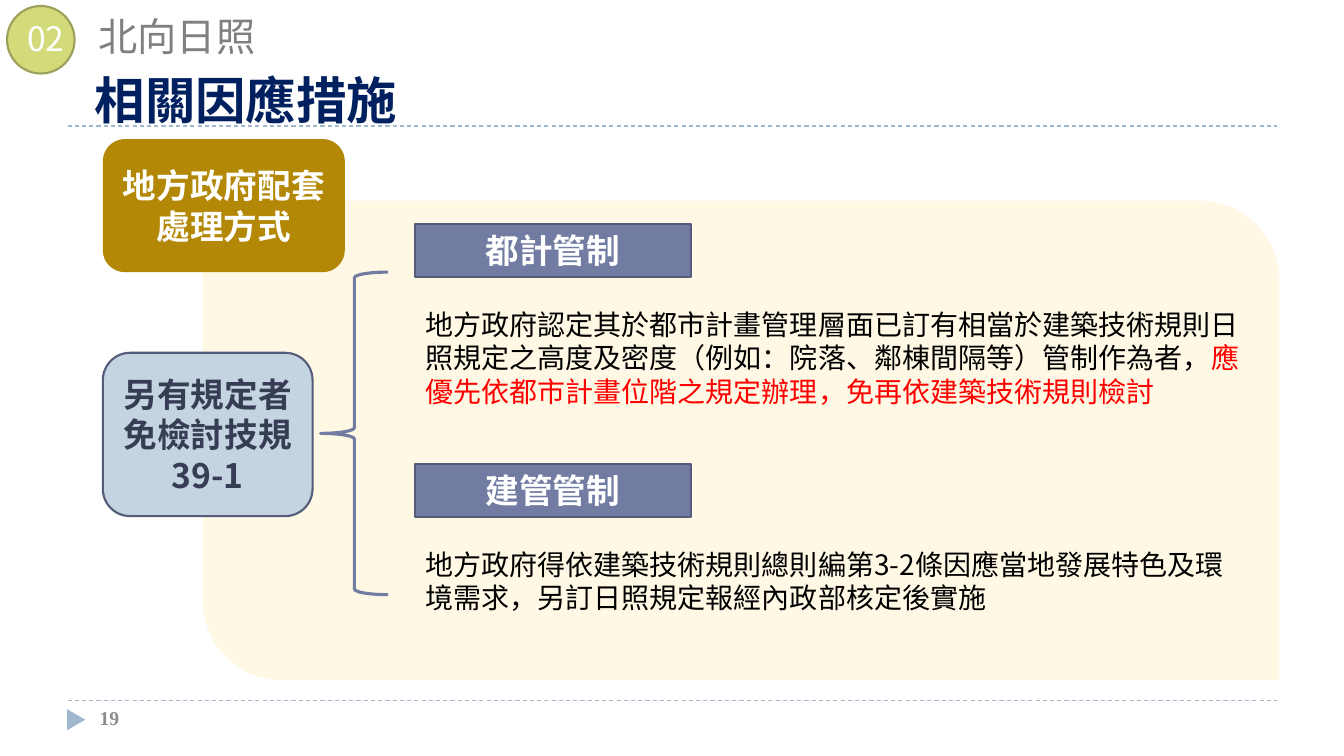
import pptx
import pptx.util
import pptx.dml.color
import pptx.enum.dml
import pptx.enum.shapes
import pptx.enum.text
import pptx.oxml.ns
import lxml.etree

RGB = pptx.dml.color.RGBColor
KIND = pptx.enum.shapes.MSO_SHAPE
ALIGN = pptx.enum.text.PP_ALIGN
ANCHOR = pptx.enum.text.MSO_ANCHOR

WHITE = RGB(0xFF, 0xFF, 0xFF)
BLACK = RGB(0x00, 0x00, 0x00)
RED = RGB(0xFF, 0x00, 0x00)
GRAY = RGB(0x80, 0x80, 0x80)
SILVER = RGB(0x8C, 0x8C, 0x8C)
NAVY = RGB(0x00, 0x20, 0x60)
SKY = RGB(0x9F, 0xB8, 0xCD)
LIME = RGB(0xD2, 0xDA, 0x7A)
OLIVE = RGB(0x9B, 0xA1, 0x5A)
CREAM = RGB(0xFE, 0xF8, 0xE4)
GOLD = RGB(0xB3, 0x88, 0x07)
SLATE = RGB(0x72, 0x7C, 0xA3)
EDGE = RGB(0x54, 0x5C, 0x79)
PALE = RGB(0xC5, 0xD4, 0xE1)
INK = RGB(0x37, 0x3D, 0x54)

SANS = "Noto Sans CJK SC"
SERIF = "Times New Roman"

# Content
NUMBER, TOPIC, TITLE, PAGE = "02", "北向日照", "相關因應措施", "19"
METHOD = "地方政府配套處理方式"
EXEMPT = "另有規定者免檢討技規39-1"
RULES = [
    ("都計管制", [
        ("地方政府認定其於都市計畫管理層面已訂有相當於建築技術規則日照規定之高度及密度"
         "（例如：院落、鄰棟間隔等）管制作為者，", BLACK),
        ("應優先依都市計畫位階之規定辦理，免再依建築技術規則檢討", RED)], 111),
    ("建管管制", [
        ("地方政府得依建築技術規則總則編第3-2條因應當地發展特色及環境需求，"
         "另訂日照規定報經內政部核定後實施", BLACK)], 77),
]

# Layout in px, 100 to the inch
SCALE = 9144
LEFT, RIGHT = 67, 1267
RULE_X, RULE_Y, STEP, GAP = 412, 222, 238, 78

deck = pptx.Presentation()
deck.slide_width, deck.slide_height = 1333 * SCALE, 750 * SCALE
slide = deck.slides.add_slide(deck.slide_layouts[6])
shapes = slide.shapes


def emu(box):
    return [v * SCALE for v in box]


def write(shape, parts, size, bold=False, font=SANS, align=ALIGN.LEFT):
    para = shape.text_frame.paragraphs[0]
    para.alignment = align
    for text, color in parts:
        run = para.add_run()
        run.text = text
        run.font.size = pptx.util.Pt(size)
        run.font.bold = bold
        run.font.name = font
        run.font.color.rgb = color
        east = lxml.etree.SubElement(run.font._element, pptx.oxml.ns.qn("a:ea"))
        east.set("typeface", font)


def label(box, parts, size, bold=False, font=SANS, wrap=True):
    shape = shapes.add_textbox(*emu(box))
    shape.text_frame.word_wrap = wrap
    write(shape, parts, size, bold, font)


def draw(kind, box, fill=None, line=None, width=1.5, text="", color=WHITE):
    shape = shapes.add_shape(kind, *emu(box))
    shape.shadow.inherit = False
    if fill is None:
        shape.fill.background()
    else:
        shape.fill.solid()
        shape.fill.fore_color.rgb = fill
    if line is None:
        shape.line.fill.background()
    else:
        shape.line.color.rgb = line
        shape.line.width = pptx.util.Pt(width)
    if text:
        shape.text_frame.word_wrap = True
        shape.text_frame.vertical_anchor = ANCHOR.MIDDLE
        write(shape, [(text, color)], 24, True, align=ALIGN.CENTER)
    return shape


# Dashed rules and page marker
for y in (695, 125):
    rule = shapes.add_connector(pptx.enum.shapes.MSO_CONNECTOR.STRAIGHT,
                                *emu((LEFT, y, RIGHT, y)))
    rule.line.color.rgb = SKY
    rule.line.width = pptx.util.Pt(0.75)
    rule.line.dash_style = pptx.enum.dml.MSO_LINE.DASH
    lxml.etree.SubElement(rule._element.spPr, pptx.oxml.ns.qn("a:effectLst"))
marker = draw(KIND.ISOSCELES_TRIANGLE, (65, 705, 21, 18), SKY)
marker.rotation = 90
label((89, 695, 289, 40), [(PAGE, SILVER)], 14, True, SERIF)

# Heading
draw(KIND.OVAL, (7, 6, 67, 67), LIME, OLIVE)
label((17, 13, 59, 50), [(NUMBER, WHITE)], 24, wrap=False)
label((88, 7, 275, 57), [(TOPIC, GRAY)], 28)
label((84, 64, 377, 71), [(TITLE, NAVY)], 36, True)

# Panel rounded at top right and bottom left
panel = draw(KIND.ROUND_2_DIAG_RECTANGLE, (201, 199, 1068, 476), CREAM)
panel.adjustments[0] = 0
panel.adjustments[1] = 0.16667

# Left boxes and brace
draw(KIND.ROUNDED_RECTANGLE, (102, 138, 240, 132), GOLD, text=METHOD)
draw(KIND.ROUNDED_RECTANGLE, (102, 350, 208, 162), PALE, EDGE,
     text=EXEMPT, color=INK)
draw(KIND.LEFT_BRACE, (318, 270, 67, 320), line=SLATE, width=2.25)

# Two kinds of control, each with its rule
for i, (name, parts, height) in enumerate(RULES):
    top = RULE_Y + i * STEP
    draw(KIND.RECTANGLE, (RULE_X, top, 273, 53), SLATE, EDGE, text=name)
    label((RULE_X, top + GAP, 829, height), parts, 20)

deck.save("out.pptx")
